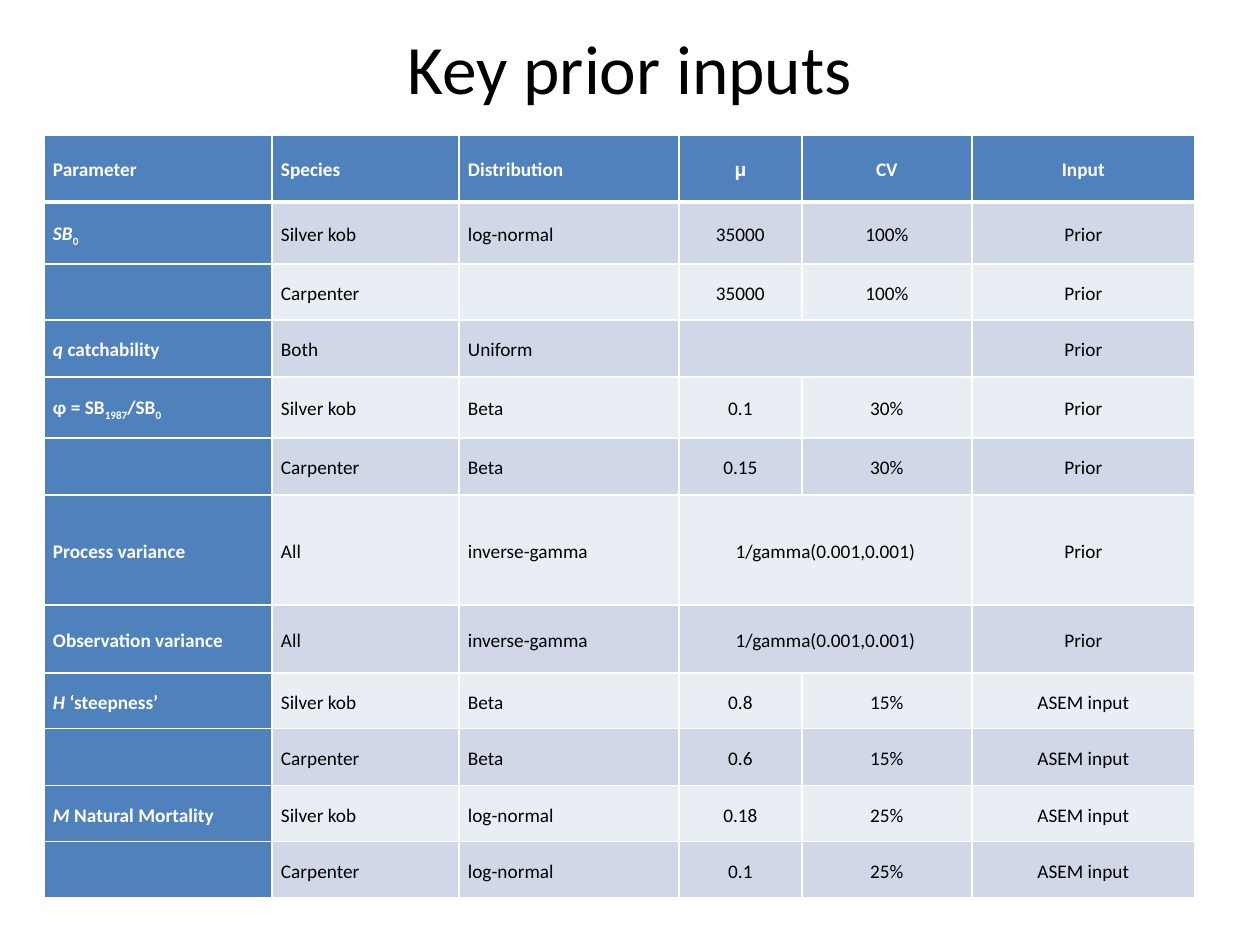
import pptx
import pptx.dml.color
import pptx.enum.text
import pptx.oxml
import pptx.oxml.ns
import pptx.util

PX = 914400 // 126
COLORS = {
    "header": "4F81BD",
    "odd_row": "D0D8E8",
    "even_row": "E9EDF4",
    "light_text": "FFFFFF",
    "dark_text": "000000",
    "border": "FFFFFF",
}
ALIGN = pptx.enum.text.PP_ALIGN
MIDDLE = pptx.enum.text.MSO_ANCHOR.MIDDLE

COLUMN_WIDTHS = [228, 187, 220, 123, 170, 223]
ROW_HEIGHTS = [67, 62, 56, 57, 61, 57, 110, 68, 56, 57, 56, 56]
HEADINGS = ["Parameter", "Species", "Distribution", "μ", "CV", "Input"]

# Each parameter label is a list of (text, style) runs.
SPAWNING_BIOMASS = [("SB", "italic"), ("0", "subscript")]
CATCHABILITY = [("q ", "italic"), ("catchability", "")]
DEPLETION = [("φ = SB", ""), ("1987", "subscript"), ("/SB", ""), ("0", "subscript")]
STEEPNESS = [("H ", "italic"), ("‘steepness’", "")]
MORTALITY = [("M", "italic"), (" Natural Mortality", "")]

# None marks a cell covered by the merged cell on its left.
PRIORS = [
    [SPAWNING_BIOMASS, "Silver kob", "log-normal", "35000", "100%", "Prior"],
    ["", "Carpenter", "", "35000", "100%", "Prior"],
    [CATCHABILITY, "Both", "Uniform", "", None, "Prior"],
    [DEPLETION, "Silver kob", "Beta", "0.1", "30%", "Prior"],
    ["", "Carpenter", "Beta", "0.15", "30%", "Prior"],
    ["Process variance", "All", "inverse-gamma", "1/gamma(0.001,0.001)", None, "Prior"],
    ["Observation variance", "All", "inverse-gamma", "1/gamma(0.001,0.001)", None, "Prior"],
    [STEEPNESS, "Silver kob", "Beta", "0.8", "15%", "ASEM input"],
    ["", "Carpenter", "Beta", "0.6", "15%", "ASEM input"],
    [MORTALITY, "Silver kob", "log-normal", "0.18", "25%", "ASEM input"],
    ["", "Carpenter", "log-normal", "0.1", "25%", "ASEM input"],
]


def format_run(run, size, color, bold=False, typeface="Calibri"):
    run.font.size = pptx.util.Pt(size)
    run.font.name = typeface
    run.font.bold = bold
    run.font.color.rgb = pptx.dml.color.RGBColor.from_string(COLORS[color])


def set_borders(cell, top, bottom):
    """Draw the four cell borders; top and bottom are widths in points."""
    properties = cell._tc.get_or_add_tcPr()
    widths = {"lnL": 1, "lnR": 1, "lnT": top, "lnB": bottom}
    for position, (side, width) in enumerate(widths.items()):
        properties.insert(position, pptx.oxml.parse_xml(
            f'<a:{side} {pptx.oxml.ns.nsdecls("a")} w="{pptx.util.Pt(width)}">'
            f'<a:solidFill><a:srgbClr val="{COLORS["border"]}"/></a:solidFill></a:{side}>'
        ))


deck = pptx.Presentation()
deck.slide_width = pptx.util.Inches(10)
deck.slide_height = pptx.util.Inches(7.5)
slide = deck.slides.add_slide(deck.slide_layouts[6])

title = slide.shapes.add_textbox(63 * PX, 38 * PX, 1134 * PX, 58 * PX).text_frame
title.word_wrap = True
title.auto_size = pptx.enum.text.MSO_AUTO_SIZE.NONE
title.vertical_anchor = MIDDLE
title.text = "Key prior inputs"
title.paragraphs[0].alignment = ALIGN.CENTER
format_run(title.paragraphs[0].runs[0], 39.6, "dark_text")

priors_table = slide.shapes.add_table(
    len(ROW_HEIGHTS), len(COLUMN_WIDTHS),
    44 * PX, 135 * PX, sum(COLUMN_WIDTHS) * PX, sum(ROW_HEIGHTS) * PX,
).table
for column, width in zip(priors_table.columns, COLUMN_WIDTHS):
    column.width = width * PX
for row, height in zip(priors_table.rows, ROW_HEIGHTS):
    row.height = height * PX

for row_index, entries in enumerate([HEADINGS] + PRIORS):
    for column_index, entry in enumerate(entries):
        cell = priors_table.cell(row_index, column_index)
        is_header = row_index == 0 or column_index == 0
        band = "odd_row" if row_index % 2 else "even_row"
        cell.fill.solid()
        cell.fill.fore_color.rgb = pptx.dml.color.RGBColor.from_string(
            COLORS["header" if is_header else band])
        set_borders(cell, top=3 if row_index == 1 else 1, bottom=3 if row_index == 0 else 1)
        if entry is None:
            priors_table.cell(row_index, column_index - 1).merge(cell)
            continue
        if not entry:
            continue

        cell.vertical_anchor = MIDDLE
        cell.margin_left = cell.margin_right = 9 * PX
        cell.margin_top = cell.margin_bottom = 0
        paragraph = cell.text_frame.paragraphs[0]
        paragraph.line_spacing = 1.15
        paragraph.alignment = ALIGN.CENTER if column_index >= 3 else ALIGN.LEFT
        for text, style in [(entry, "")] if isinstance(entry, str) else entry:
            run = paragraph.add_run()
            run.text = text
            format_run(run, 11, "light_text" if is_header else "dark_text", is_header,
                       "Arial" if text == "μ" else "Calibri")
            if style == "italic":
                run.font.italic = True
            elif style == "subscript":
                run.font._element.set("baseline", "-25000")

deck.save("out.pptx")
